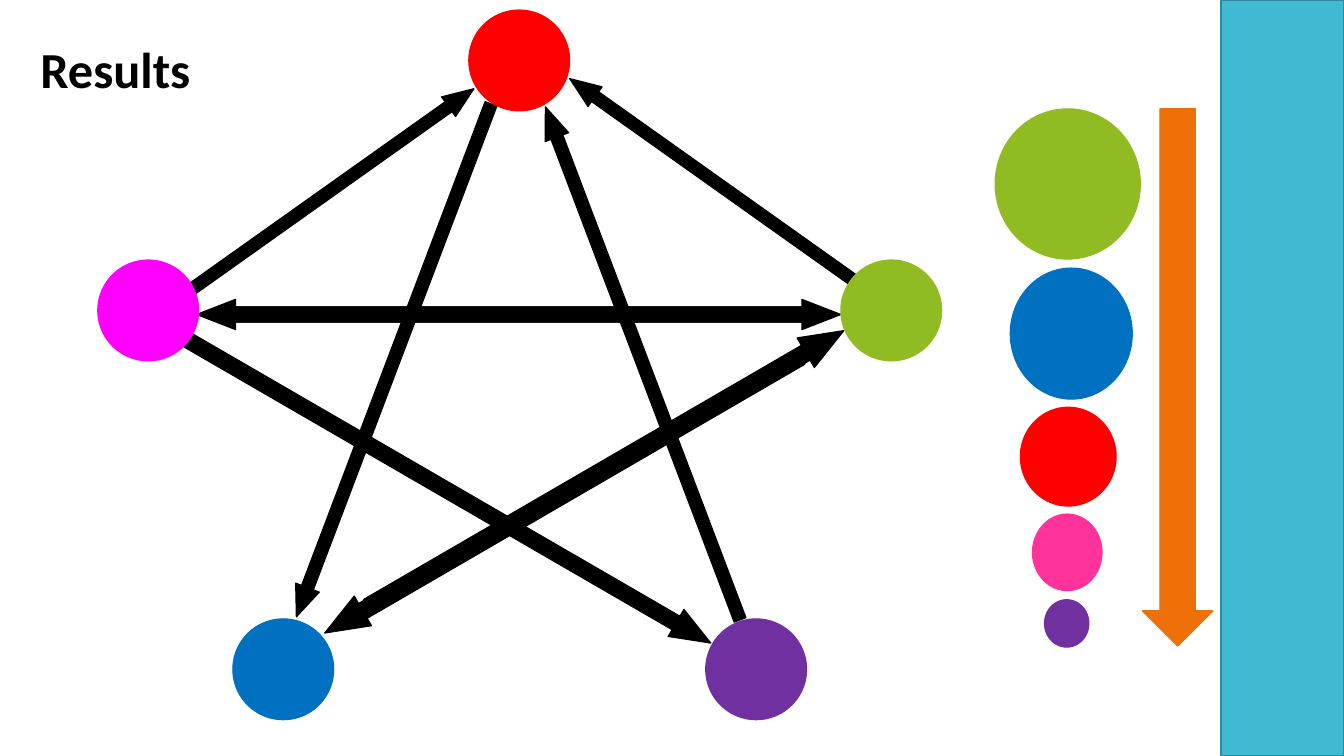
from math import atan2, degrees, hypot

from pptx import Presentation
from pptx.dml.color import RGBColor
from pptx.enum.shapes import MSO_SHAPE
from pptx.enum.text import MSO_ANCHOR, MSO_AUTO_SIZE, PP_ALIGN
from pptx.util import Inches, Pt

TITLE = "Results"
NODE_SIZE = 1
# left, top, colour
NODES = [
    (4.65, 0.1, "FF0000"),
    (2.31, 6.14, "0070C0"),
    (7, 6.14, "7030A0"),
    (8.34, 2.58, "90BB23"),
    (0.97, 2.58, "FF00FF"),
]
# tail point, tip point, width, head length relative to width
ARROWS = [
    ((4.87, 1.03), (2.94, 6.12), 0.25, 1.24),
    ((7.34, 6.15), (5.41, 1.06), 0.25, 1.285),
    ((9.0, 3.16), (5.65, 0.78), 0.24, 1.285),
    ((1.35, 3.26), (4.7, 0.88), 0.24, 1.285),
    ((2.21, 3.12), (8.34, 3.12), 0.3, 1.285),
    ((8.08, 3.12), (1.95, 3.12), 0.3, 1.285),
    ((7.94, 3.54), (3.22, 6.28), 0.34, 1.285),
    ((3.65, 6.02), (8.37, 3.28), 0.34, 1.285),
    ((1.58, 3.21), (7.05, 6.38), 0.31, 1.285),
]
# ranking from largest to smallest: left, top, width, height, colour
RANKING = [
    (9.87, 1.08, 1.44, 1.49, "90BB23"),
    (10.02, 2.66, 1.21, 1.3, "0070C0"),
    (10.12, 4.04, 0.95, 0.98, "FF0000"),
    (10.24, 5.1, 0.69, 0.76, "FF3399"),
    (10.36, 5.95, 0.44, 0.47, "7030A0"),
]


def rgb(color):
    return RGBColor.from_string(color)


def add_shape(kind, x, y, w, h, fill, line=None):
    s = slide.shapes.add_shape(kind, Inches(x), Inches(y), Inches(w), Inches(h))
    s.shadow.inherit = False
    s.fill.solid()
    s.fill.fore_color.rgb = rgb(fill)
    s.line.color.rgb = rgb(line or fill)
    s.line.width = Pt(0.85)
    return s


def add_arrow(tail, tip, width, head):
    dx, dy = tip[0] - tail[0], tip[1] - tail[1]
    length = hypot(dx, dy)
    x = (tail[0] + tip[0] - width) / 2
    y = (tail[1] + tip[1] - length) / 2
    s = add_shape(MSO_SHAPE.DOWN_ARROW, x, y, width, length, "000000")
    s.adjustments[0] = 0.5
    s.adjustments[1] = head
    s.rotation = degrees(atan2(-dx, dy)) % 360


prs = Presentation()
prs.slide_width, prs.slide_height = Inches(13.33), Inches(7.5)
slide = prs.slides.add_slide(prs.slide_layouts[5])

# Title
title = slide.shapes.title
title.left, title.top = Inches(0.3), Inches(0.33)
title.width, title.height = Inches(1.79), Inches(0.71)
tf = title.text_frame
tf.text = TITLE
tf.word_wrap = False
tf.auto_size = MSO_AUTO_SIZE.SHAPE_TO_FIT_TEXT
tf.vertical_anchor = MSO_ANCHOR.TOP
p = tf.paragraphs[0]
p.alignment = PP_ALIGN.LEFT
p.font.name = "Calibri"
p.font.size = Pt(36)
p.font.bold = True
p.font.color.rgb = rgb("000000")

# Side band
add_shape(MSO_SHAPE.RECTANGLE, 12.11, 0, 1.22, 7.5, "40BAD2", "2F8A9B")

# Ranking with its downward arrow
for x, y, w, h, color in RANKING:
    add_shape(MSO_SHAPE.OVAL, x, y, w, h, color)
add_shape(MSO_SHAPE.DOWN_ARROW, 11.33, 1.08, 0.7, 5.33, "EE7008")

# Network: arrows first, so that the nodes cover their tails
for arrow in ARROWS:
    add_arrow(*arrow)
for x, y, color in NODES:
    add_shape(MSO_SHAPE.OVAL, x, y, NODE_SIZE, NODE_SIZE, color)

prs.save("out.pptx")
